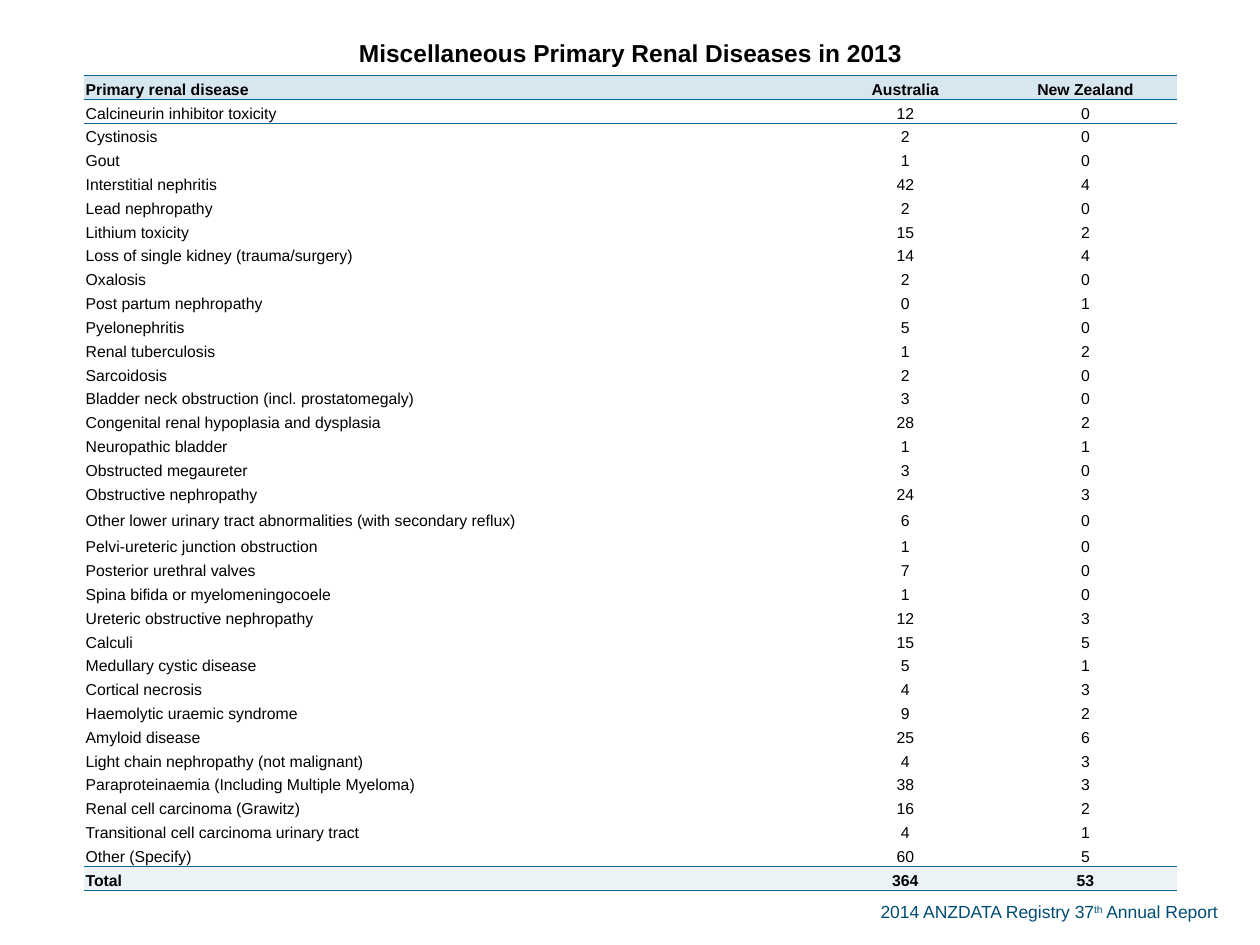
from lxml import etree
from pptx import Presentation
from pptx import util as u
from pptx.dml.color import RGBColor
from pptx.enum import text
from pptx.oxml.ns import qn

FONT = "Arial"
BLACK = RGBColor(0x00, 0x00, 0x00)
NAVY = RGBColor(0x00, 0x4D, 0x73)
RULE = RGBColor(0x00, 0x66, 0x99)
HEAD = RGBColor(0xD7, 0xE7, 0xEF)
SUM = RGBColor(0xEB, 0xF3, 0xF7)
PLAIN = "{2D5ABB26-0587-4C30-8999-92F81FD0307C}"  # no style, no grid

TITLE = "Miscellaneous Primary Renal Diseases in 2013"
COLS = [5.81, 1.41, 1.45]
ROWS = [
    ("Primary renal disease", "Australia", "New Zealand"),
    ("Calcineurin inhibitor toxicity", 12, 0),
    ("Cystinosis", 2, 0),
    ("Gout", 1, 0),
    ("Interstitial nephritis", 42, 4),
    ("Lead nephropathy", 2, 0),
    ("Lithium toxicity", 15, 2),
    ("Loss of single kidney (trauma/surgery)", 14, 4),
    ("Oxalosis", 2, 0),
    ("Post partum nephropathy", 0, 1),
    ("Pyelonephritis", 5, 0),
    ("Renal tuberculosis", 1, 2),
    ("Sarcoidosis", 2, 0),
    ("Bladder neck obstruction (incl. prostatomegaly)", 3, 0),
    ("Congenital renal hypoplasia and dysplasia", 28, 2),
    ("Neuropathic bladder", 1, 1),
    ("Obstructed megaureter", 3, 0),
    ("Obstructive nephropathy", 24, 3),
    ("Other lower urinary tract abnormalities (with secondary reflux)", 6, 0),
    ("Pelvi-ureteric junction obstruction", 1, 0),
    ("Posterior urethral valves", 7, 0),
    ("Spina bifida or myelomeningocoele", 1, 0),
    ("Ureteric obstructive nephropathy", 12, 3),
    ("Calculi", 15, 5),
    ("Medullary cystic disease", 5, 1),
    ("Cortical necrosis", 4, 3),
    ("Haemolytic uraemic syndrome", 9, 2),
    ("Amyloid disease", 25, 6),
    ("Light chain nephropathy (not malignant)", 4, 3),
    ("Paraproteinaemia (Including Multiple Myeloma)", 38, 3),
    ("Renal cell carcinoma (Grawitz)", 16, 2),
    ("Transitional cell carcinoma urinary tract", 4, 1),
    ("Other (Specify)", 60, 5),
    ("Total", 364, 53),
]
HIGH = {0: 0.39, 1: 0.19, 19: 0.23}  # rows taller than the rest
LOW = 0.17


def style(font, size, color, bold=False):
    font.name, font.size, font.bold = FONT, u.Pt(size), bold
    font.color.rgb = color


def rule(cell, tag):
    """Draw a thin line on one side of a cell."""
    line = etree.Element(qn(tag), w=str(u.Pt(0.5)))
    fill = etree.SubElement(line, qn("a:solidFill"))
    etree.SubElement(fill, qn("a:srgbClr"), val=str(RULE))
    cell._tc.get_or_add_tcPr().insert(0, line)


def write(cell, words, size, bold, mid, fill=None):
    cell.margin_left = cell.margin_top = cell.margin_right = u.Inches(0.01)
    cell.margin_bottom = 0
    cell.vertical_anchor = text.MSO_ANCHOR.MIDDLE
    cell.text_frame.text = str(words)
    par = cell.text_frame.paragraphs[0]
    par.alignment = text.PP_ALIGN.CENTER if mid else text.PP_ALIGN.LEFT
    par.line_spacing, par.space_after = 1.19, u.Pt(14)
    style(par.runs[0].font, size, BLACK, bold)
    if fill is None:
        cell.fill.background()
    else:
        cell.fill.solid()
        cell.fill.fore_color.rgb = fill


def add_grid(slide, left, top, width, height):
    last = len(ROWS)
    frame = slide.shapes.add_table(last + 1, len(COLS), *map(u.Inches, (left, top, width, height)))
    grid = frame.table
    grid.first_row = grid.horz_banding = False
    grid._tbl.tblPr.find(qn("a:tableStyleId")).text = PLAIN
    for col, wide in zip(grid.columns, COLS):
        col.width = u.Inches(wide)
    for i, row in enumerate(grid.rows):
        row.height = u.Inches(HIGH.get(i, LOW))

    # Title row across all columns
    grid.cell(0, 0).merge(grid.cell(0, len(COLS) - 1))
    write(grid.cell(0, 0), TITLE, 14, True, True)

    # Header, diseases and total
    fills = {1: HEAD, last: SUM}
    for i, row in enumerate(ROWS, 1):
        for j, words in enumerate(row):
            write(grid.cell(i, j), words, 9, i in fills, j > 0, fills.get(i))

    # Lines around the header and the total
    for j in range(len(COLS)):
        for i in (0, 1, last - 1, last):
            rule(grid.cell(i, j), "a:lnB")
        for i in (1, 2, last):
            rule(grid.cell(i, j), "a:lnT")


def add_foot(slide, left, top, width, height):
    box = slide.shapes.add_textbox(*map(u.Inches, (left, top, width, height)))
    box.text_frame.word_wrap = True
    par = box.text_frame.paragraphs[0]
    for words in ("2014 ANZDATA Registry 37", "th", " Annual Report"):
        run = par.add_run()
        run.text = words
        style(run.font, 10, NAVY)
    par.runs[1]._r.get_or_add_rPr().set("baseline", "30000")


def main():
    deck = Presentation()
    deck.slide_width, deck.slide_height = u.Inches(10), u.Inches(7.5)
    slide = deck.slides.add_slide(deck.slide_layouts[6])
    add_foot(slide, 6.89, 7.1, 2.99, 0.27)
    add_grid(slide, 0.67, 0.21, 8.67, 6.3)
    deck.save("out.pptx")


if __name__ == "__main__":
    main()
